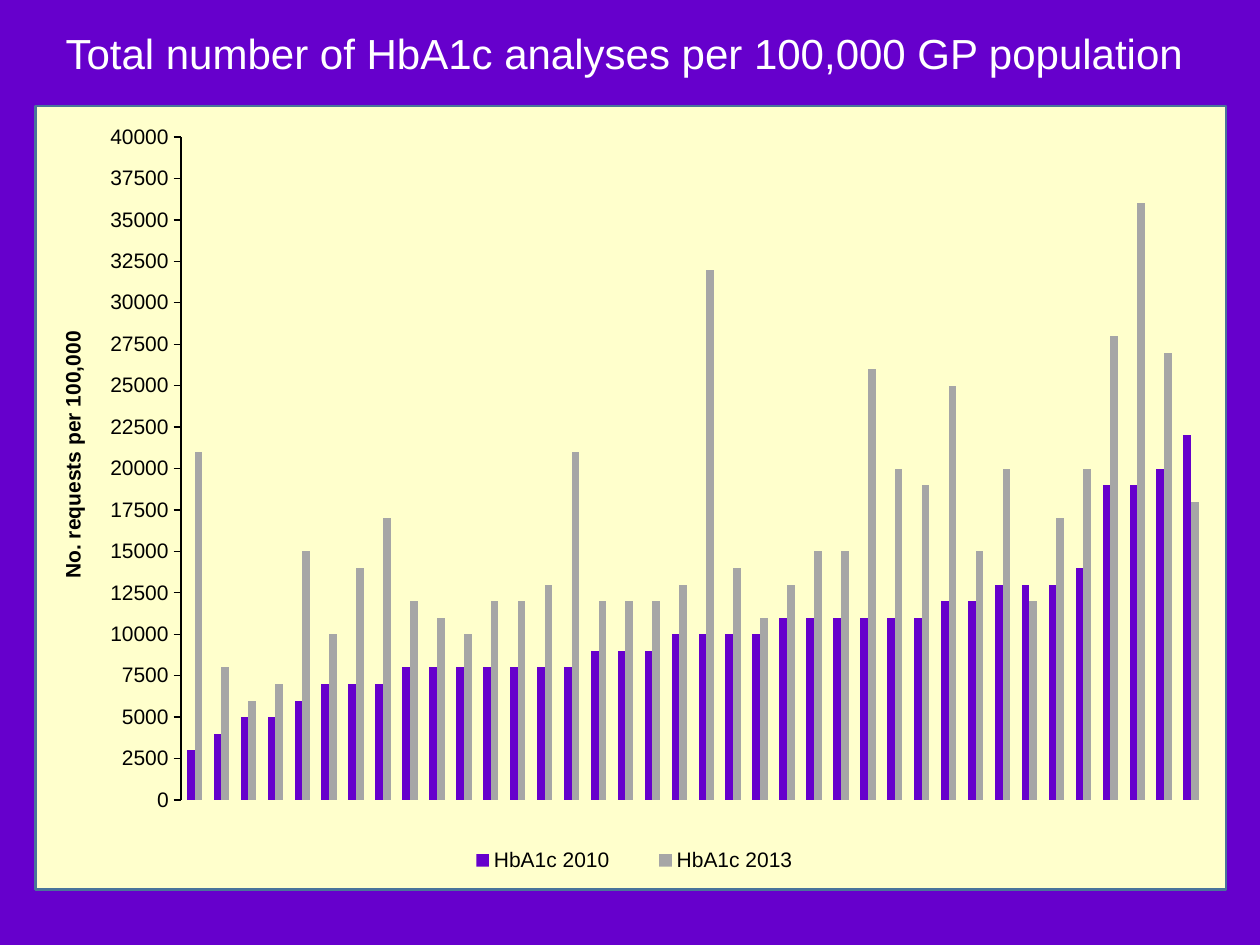
from lxml import etree
from pptx import Presentation
from pptx import util as u
from pptx.chart.data import CategoryChartData
from pptx.dml.color import RGBColor
from pptx.enum import chart as ch, shapes, text
from pptx.oxml import parse_xml
from pptx.oxml.ns import nsdecls, qn

COLORS = {"purple": "6600CC", "cream": "FFFFCC", "border": "49749B",
          "grey": "A6A6A6", "black": "000000", "white": "FFFFFF"}
SERIES_THOUSANDS = {
    "HbA1c 2010": ("purple", [
        3, 4, 5, 5, 6, 7, 7, 7, 8, 8, 8, 8, 8, 8, 8, 9, 9, 9, 10, 10, 10, 10, 11, 11,
        11, 11, 11, 11, 12, 12, 13, 13, 13, 14, 19, 19, 20, 22]),
    "HbA1c 2013": ("grey", [
        21, 8, 6, 7, 15, 10, 14, 17, 12, 11, 10, 12, 12, 13, 21, 12, 12, 12, 13, 32, 14,
        11, 13, 15, 15, 26, 20, 19, 25, 15, 20, 12, 17, 20, 28, 36, 27, 18]),
}


def color(name):
    """Return the named colour."""
    return RGBColor.from_string(COLORS[name])


def style_font(font, size=12, fill="black", bold=False):
    """Format a font."""
    font.name, font.size, font.bold = "Arial", u.Pt(size), bold
    font.color.rgb = color(fill)


def add_text(tf, content, align=text.PP_ALIGN.LEFT, **fmt):
    """Write one formatted line into a text frame."""
    p = tf.paragraphs[0]
    p.alignment = align
    r = p.add_run()
    r.text = content
    style_font(r.font, **fmt)


def set_layout(parent, x, y, w=None, h=None, inner=False):
    """Place a chart part by fractions of the chart area."""
    parts = ['<c:layoutTarget val="inner"/>'] if inner else []
    parts += ['<c:xMode val="edge"/>', '<c:yMode val="edge"/>']
    parts += [f'<c:{tag} val="{val}"/>' for tag, val in zip("xywh", (x, y, w, h))
              if val is not None]
    layout = parse_xml(f'<c:layout {nsdecls("c")}><c:manualLayout>'
                       f'{"".join(parts)}</c:manualLayout></c:layout>')
    for old in parent.findall(qn("c:layout")):
        parent.remove(old)
    before = [e for e in parent if etree.QName(e).localname in ("tx", "legendPos")]
    parent.insert(parent.index(before[-1]) + 1 if before else 0, layout)


def add_title(s, box):
    """Place the slide title."""
    sp = s.shapes.title
    sp.left, sp.top, sp.width, sp.height = map(u.Inches, box)
    tf = sp.text_frame
    tf.word_wrap = False
    tf.auto_size = text.MSO_AUTO_SIZE.SHAPE_TO_FIT_TEXT
    tf.vertical_anchor = text.MSO_ANCHOR.TOP
    add_text(tf, "Total number of HbA1c analyses per 100,000 GP population",
             size=24, fill="white")


def add_panel(s, box):
    """Draw the panel behind the chart."""
    sp = s.shapes.add_shape(shapes.MSO_SHAPE.RECTANGLE, *map(u.Inches, box))
    sp.shadow.inherit = False
    sp.fill.solid()
    sp.fill.fore_color.rgb = color("cream")
    sp.line.color.rgb = color("border")
    sp.line.width = u.Pt(1.5)


def format_value_axis(axis):
    """Format the request scale and its title."""
    axis.minimum_scale, axis.maximum_scale, axis.major_unit = 0, 40000, 2500
    axis.has_major_gridlines = False
    axis.major_tick_mark = ch.XL_TICK_MARK.OUTSIDE
    axis.tick_labels.number_format = "0"
    axis.tick_labels.number_format_is_linked = False
    style_font(axis.tick_labels.font)
    axis.format.line.color.rgb = color("black")
    axis.format.line.width = u.Pt(0.75)
    title = axis.axis_title
    add_text(title.text_frame, "No. requests per 100,000",
             align=text.PP_ALIGN.CENTER, bold=True)
    body = title.text_frame._txBody.find(qn("a:bodyPr"))
    body.set("rot", "-5400000")
    body.set("vert", "horz")
    set_layout(title._element, 0.01, 0.27)


def add_requests_chart(s, box):
    """Add the clustered columns of both years."""
    data = CategoryChartData(number_format="0")
    data.categories = [str(i + 1) for i in range(38)]
    for name, (_, thousands) in SERIES_THOUSANDS.items():
        data.add_series(name, [value * 1000 for value in thousands])
    chart = s.shapes.add_chart(ch.XL_CHART_TYPE.COLUMN_CLUSTERED,
                               *map(u.Inches, box), data).chart
    style_font(chart.font)
    chart.has_title = False
    plot = chart.plots[0]
    plot.gap_width, plot.overlap, plot.vary_by_categories = 150, 0, False
    for series, (fill, _) in zip(plot.series, SERIES_THOUSANDS.values()):
        series.format.fill.solid()
        series.format.fill.fore_color.rgb = color(fill)
        series.invert_if_negative = False
    chart.category_axis.visible = False
    format_value_axis(chart.value_axis)
    chart.has_legend = True
    chart.legend.position = ch.XL_LEGEND_POSITION.RIGHT
    chart.legend.include_in_layout = False
    style_font(chart.legend.font)
    set_layout(chart.legend._element, 0.33, 0.92, 0.34, 0.06)
    plot_area = chart._chartSpace.chart.plotArea
    set_layout(plot_area, 0.116, 0.027, 0.867, 0.846, inner=True)


def main():
    """Build and save the slide."""
    prs = Presentation()
    prs.slide_width, prs.slide_height = u.Inches(10), u.Inches(7.5)
    s = prs.slides.add_slide(prs.slide_layouts[5])
    s.background.fill.solid()
    s.background.fill.fore_color.rgb = color("purple")
    add_panel(s, (0.28, 0.84, 9.45, 6.22))
    add_requests_chart(s, (0.35, 0.92, 9.37, 6.22))
    add_title(s, (0.42, 0.17, 9.16, 0.5))
    prs.save("out.pptx")


if __name__ == "__main__":
    main()
